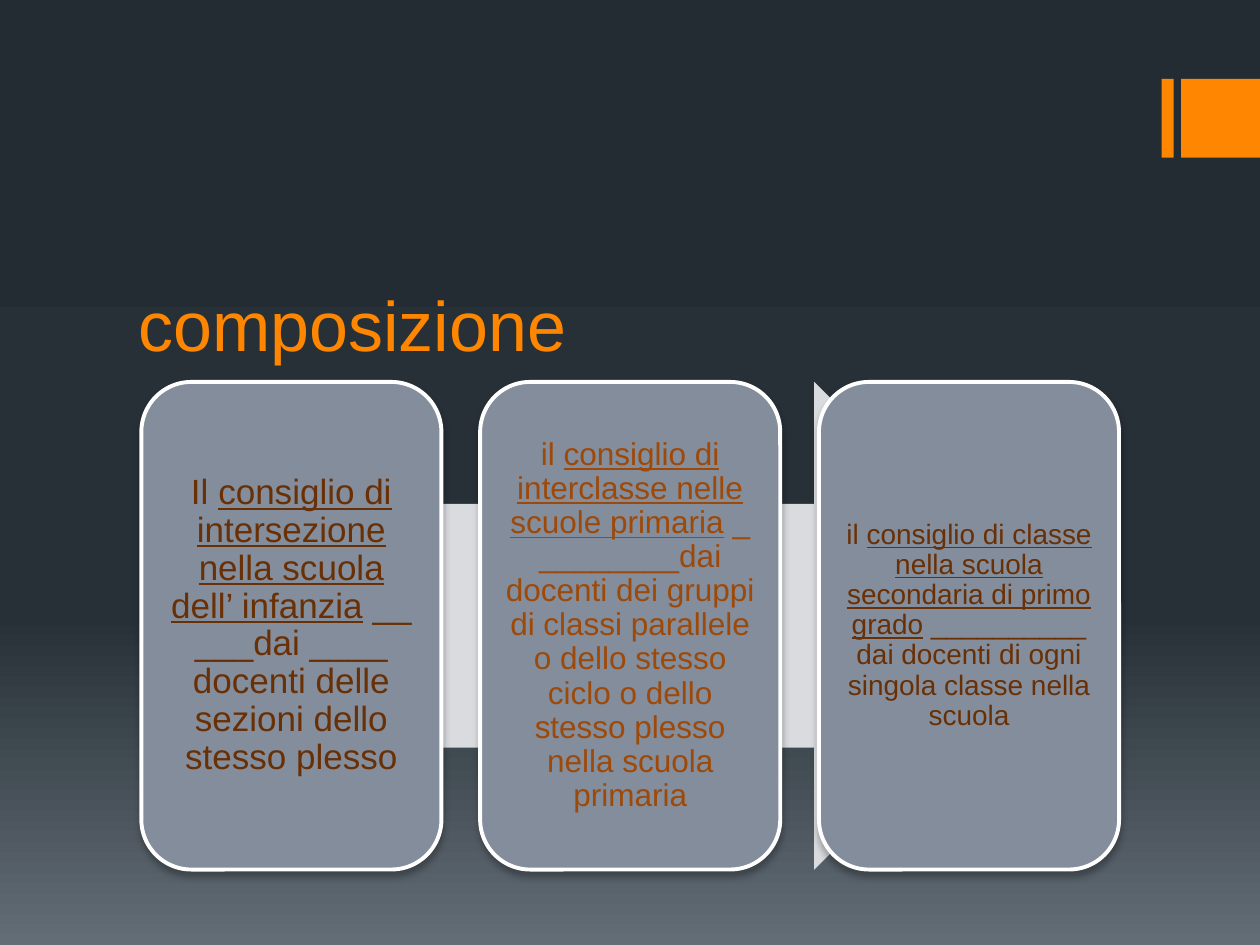
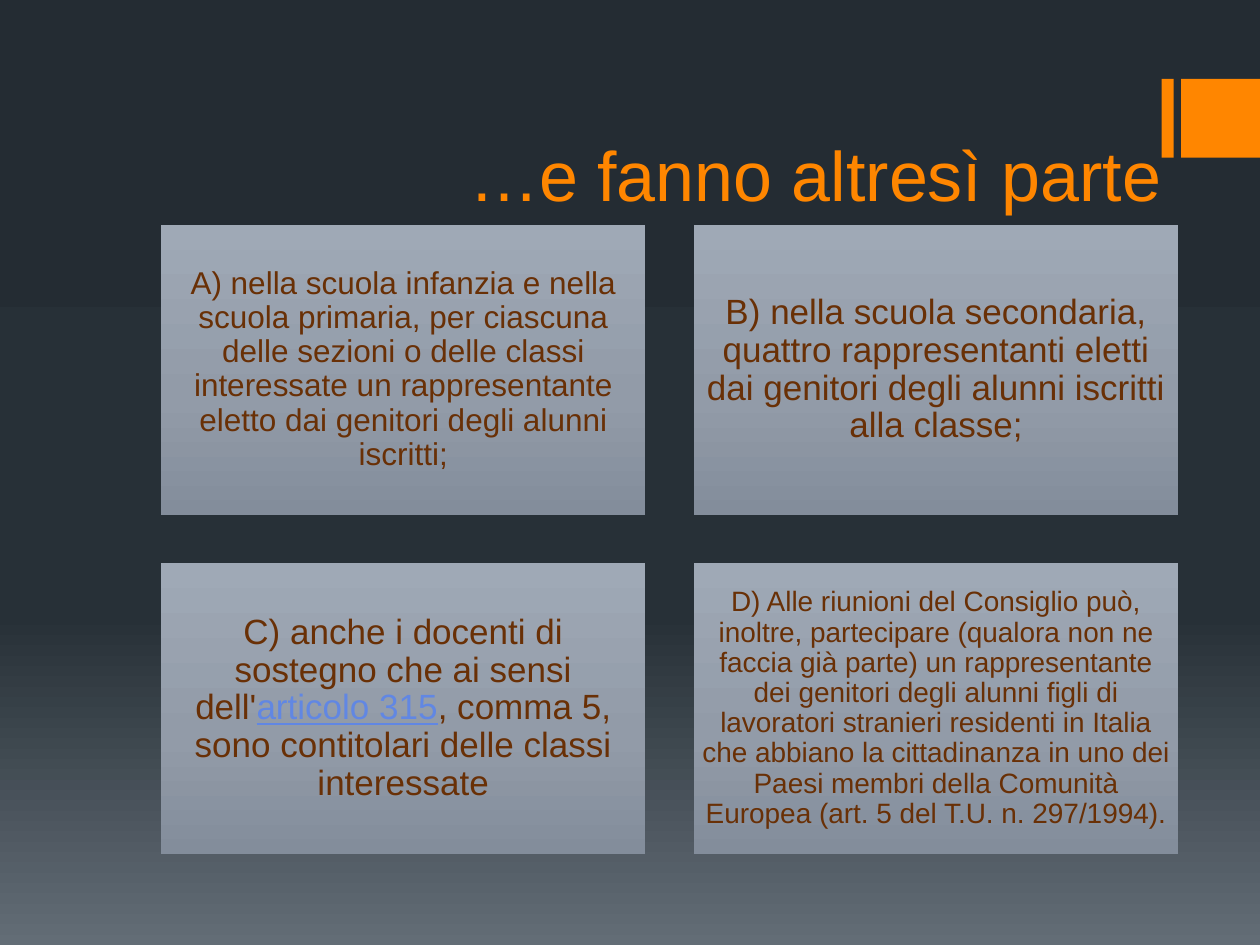
from dataclasses import dataclass

from lxml.etree import SubElement as Sub
from pptx import Presentation
from pptx.dml.color import RGBColor as Rgb
from pptx.enum.shapes import MSO_SHAPE as Kind
from pptx.enum.text import MSO_ANCHOR as Anchor, PP_ALIGN as Align
from pptx.oxml.ns import qn
from pptx.util import Cm, Pt

# Content: each text is a list of (words, style) runs
CARDS = [
    (20, "brown", [("Il ", ""),
                   ("consiglio di intersezione nella scuola dell’ infanzia", "under"),
                   (" __ ___dai ____ docenti delle sezioni dello stesso plesso", "")]),
    (18, "rust", [("il ", ""),
                  ("consiglio di interclasse nelle scuole primaria", "under"),
                  (" _ ________dai docenti dei gruppi di classi parallele o dello "
                   "stesso ciclo o dello stesso plesso nella scuola primaria", "")]),
    (16, "brown", [("il ", ""),
                   ("consiglio di classe nella scuola secondaria di primo grado", "under"),
                   (" __________ dai docenti di ogni singola classe nella scuola", "")]),
]
TILES = [
    (18, "brown", [("A) nella scuola infanzia e nella scuola primaria, per ciascuna delle "
                    "sezioni o delle classi interessate un rappresentante eletto dai "
                    "genitori degli alunni iscritti;", "")]),
    (20, "brown", [("B) nella scuola secondaria, quattro rappresentanti eletti dai "
                    "genitori degli alunni iscritti alla classe;", "")]),
    (20, "brown", [("C) anche i docenti di sostegno che ai sensi dell'", ""),
                   ("articolo 315", "link"),
                   (", comma 5, sono contitolari delle classi interessate", "")]),
    (16, "brown", [("D) Alle riunioni del Consiglio può, inoltre, partecipare (qualora non "
                    "ne faccia già parte) un rappresentante dei genitori degli alunni figli "
                    "di lavoratori stranieri residenti in Italia che abbiano la cittadinanza "
                    "in uno dei Paesi membri della Comunità Europea (art. 5 del T.U. n. "
                    "297/1994).", "")]),
]


@dataclass(frozen=True)
class Theme:
    font: str = "Arial"
    head: int = 40
    orange: str = "FF8600"
    brown: str = "693006"
    rust: str = "9D4909"
    link: str = "6187E3"
    slate: str = "838D9B"
    pale: str = "D9DBDE"
    white: str = "FFFFFF"
    back: tuple = ((0, "242C33"), (65, "273037"), (100, "636D76"))
    tile: tuple = ((0, "9FA9B6"), (60, "929BA8"), (100, "838D9B"))


T = Theme()


# Fills and shapes
def blend(fill, node, stops):
    """Fill from top to bottom with any number of stops."""
    fill.gradient()
    fill.gradient_angle = 270
    group = node.find(".//" + qn("a:gsLst"))
    for old in list(group):
        group.remove(old)
    for place, hue in stops:
        stop = Sub(group, qn("a:gs"), pos=str(place * 1000))
        Sub(stop, qn("a:srgbClr"), val=hue)


def draw(slide, kind, x, y, w, h, hue):
    shape = slide.shapes.add_shape(kind, Cm(x), Cm(y), Cm(w), Cm(h))
    shape.shadow.inherit = False
    shape.line.fill.background()
    if isinstance(hue, str):
        shape.fill.solid()
        shape.fill.fore_color.rgb = Rgb.from_string(hue)
    else:
        blend(shape.fill, shape.element, hue)
    return shape


def frame(shape):
    """White outline and a soft shadow below."""
    shape.line.color.rgb = Rgb.from_string(T.white)
    shape.line.width = Pt(2.25)
    list_ = shape.element.spPr.find(qn("a:effectLst"))
    shade = Sub(list_, qn("a:outerShdw"), blurRad=str(Pt(4)), dist=str(Pt(3)),
                dir="5400000", rotWithShape="0")
    hue = Sub(shade, qn("a:srgbClr"), val="000000")
    Sub(hue, qn("a:alpha"), val="28000")


# Text
def style(para, size, hue):
    para.font.name = T.font
    para.font.size = Pt(size)
    para.font.color.rgb = Rgb.from_string(hue)


def write(shape, size, tone, runs):
    text = shape.text_frame
    text.word_wrap = True
    text.vertical_anchor = Anchor.MIDDLE
    inset = Cm(size / 100)
    text.margin_left = text.margin_right = inset
    text.margin_top = text.margin_bottom = inset
    para = text.paragraphs[0]
    para.alignment = Align.CENTER
    para.line_spacing = 0.9
    style(para, size, getattr(T, tone))
    for words, look in runs:
        run = para.add_run()
        run.text = words
        if look:
            run.font.underline = True
        if look == "link":
            run.font.color.rgb = Rgb.from_string(T.link)


def start(deck, title, x, y, w, h, indent=0):
    """New slide with backdrop, corner bands and title."""
    slide = deck.slides.add_slide(deck.slide_layouts[6])
    blend(slide.background.fill, slide.element, T.back)
    for left, width in ((23.42, 0.24), (23.81, 1.59)):
        draw(slide, Kind.RECTANGLE, left, 1.59, width, 1.59, T.orange)
    text = slide.shapes.add_textbox(Cm(x), Cm(y), Cm(w), Cm(h)).text_frame
    text.word_wrap = True
    text.vertical_anchor = Anchor.BOTTOM
    para = text.paragraphs[0]
    para.text = title
    style(para, T.head, T.orange)
    para._p.get_or_add_pPr().set("marL", str(Cm(indent)))
    return slide


def main():
    deck = Presentation()
    deck.slide_width, deck.slide_height = Cm(25.4), Cm(19.05)

    # Three cards in a row over an arrow
    slide = start(deck, "composizione", 2.54, 4.29, 20.32, 3.2)
    top, high = 7.7, 9.83
    draw(slide, Kind.RIGHT_ARROW, 4.06, top, 17.27, high, T.pale)
    for i, card in enumerate(CARDS):
        shape = draw(slide, Kind.ROUNDED_RECTANGLE, 2.85 + i * 6.83, top, 6.05, high, T.slate)
        frame(shape)
        write(shape, *card)

    # Four tiles, two by two
    slide = start(deck, "…e fanno altresì parte", 4.5, 1.12, 19.35, 3.35, 4.71)
    wide, high, gap = 9.76, 5.85, 0.98
    for i, tile in enumerate(TILES):
        row, col = divmod(i, 2)
        shape = draw(slide, Kind.RECTANGLE, 3.25 + col * (wide + gap),
                     4.53 + row * (high + gap), wide, high, T.tile)
        write(shape, *tile)

    deck.save("out.pptx")


if __name__ == "__main__":
    main()
